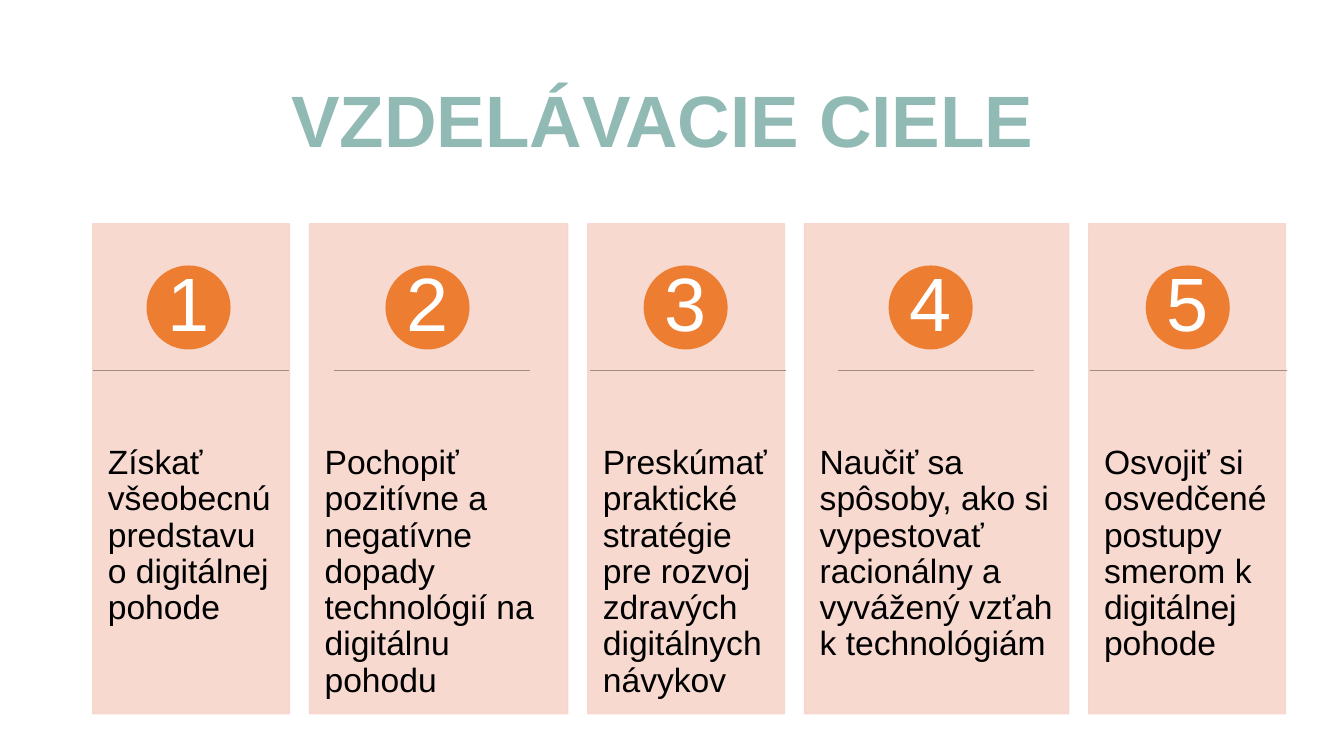
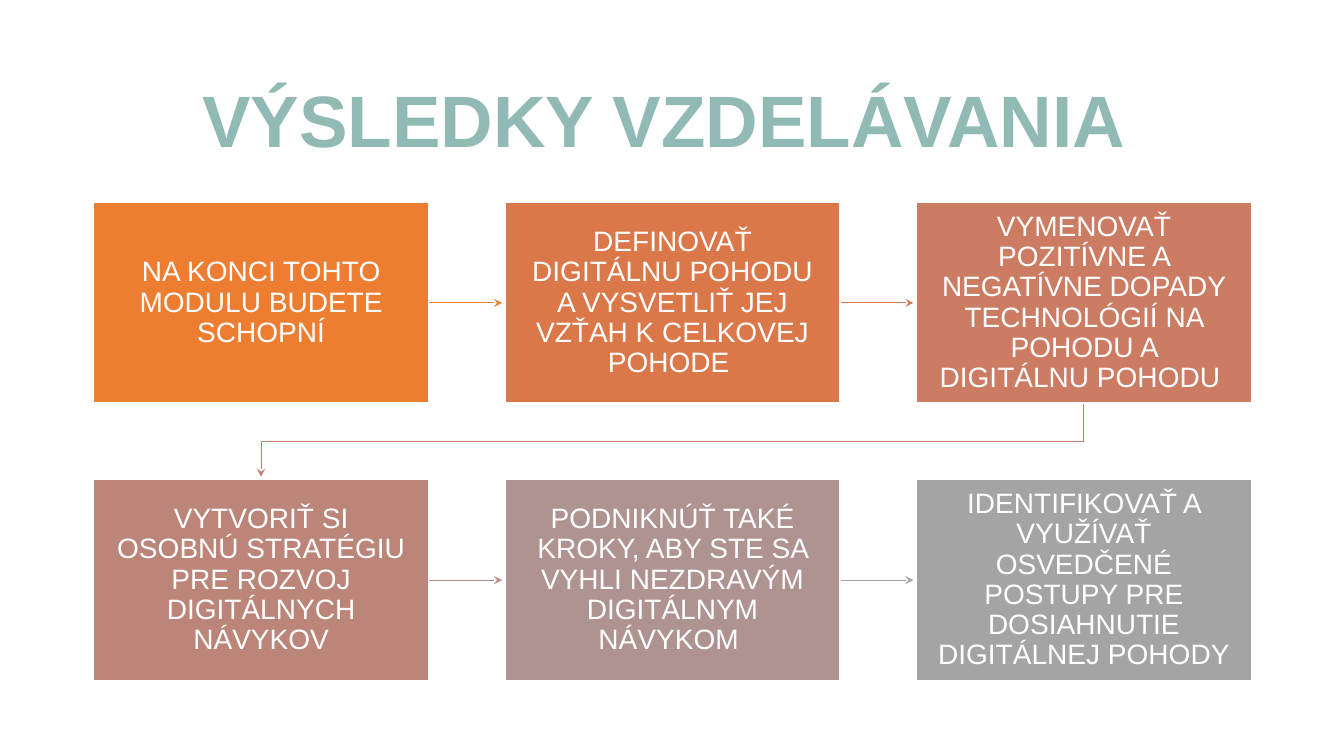
from lxml.etree import SubElement
from pptx import Presentation
from pptx.dml.color import RGBColor
from pptx.enum.shapes import MSO_CONNECTOR, MSO_SHAPE
from pptx.enum.text import MSO_ANCHOR, MSO_AUTO_SIZE, PP_ALIGN
from pptx.oxml.ns import qn
from pptx.util import Inches, Pt

FONT = "Arial"
COLORS = {
    "title": "92BAB5", "accent": "ED7D31", "card": "F7D5CB",
    "rule": "A08C84", "text": "000000", "white": "FFFFFF",
}


def write(sp, text, size, color, align=PP_ALIGN.CENTER, anchor=MSO_ANCHOR.MIDDLE,
          margins=(0.1, 0.05), bold=False):
    """Fill a shape with one paragraph; margins are (sides, top and bottom)."""
    tf = sp.text_frame
    tf.word_wrap = True
    tf.auto_size = MSO_AUTO_SIZE.NONE
    tf.vertical_anchor = anchor
    tf.margin_left = tf.margin_right = Inches(margins[0])
    tf.margin_top = tf.margin_bottom = Inches(margins[1])
    p = tf.paragraphs[0]
    p.alignment = align
    p.line_spacing = 0.9
    r = p.add_run()
    r.text = text
    r.font.name = FONT
    r.font.size = Pt(size)
    r.font.bold = bold
    r.font.color.rgb = RGBColor.from_string(color)


def paint(sp, line, width, fill=None, arrow=False):
    """Set line and fill, and take the theme shadow away."""
    sp.line.color.rgb = RGBColor.from_string(line)
    sp.line.width = Pt(width)
    if fill:
        sp.fill.solid()
        sp.fill.fore_color.rgb = RGBColor.from_string(fill)
    if arrow:
        SubElement(sp.line._get_or_add_ln(), qn("a:tailEnd"), type="stealth")
    SubElement(sp._element.spPr, qn("a:effectLst"))


prs = Presentation()
prs.slide_width = Inches(13.33)
prs.slide_height = Inches(7.5)

layout = prs.slide_layouts[5]
title = layout.placeholders[0]
title.left, title.top = Inches(0.92), Inches(0.61)
title.width, title.height = Inches(11.5), Inches(1.24)

slides = []
for heading in ("VZDELÁVACIE CIELE ", "VÝSLEDKY VZDELÁVANIA "):
    s = prs.slides.add_slide(layout)
    write(s.shapes.title, heading, 52, COLORS["title"], bold=True)
    slides.append(s)
goals, results = slides

# Goals: five numbered cards in a row
CARD_TOP, CARD_H, CARD_GAP = 2.22, 4.86, 0.2
TEXT_TOP = 2.2
CIRCLE_TOP, CIRCLE = 2.64, 0.82
RULE_Y, RULE_W = 3.67, 1.95
# card width, circle offset, rule offset, text
cards = [
    (1.95, 0.54, 0, "Získať všeobecnú predstavu o digitálnej pohode"),
    (2.56, 0.76, 0.24, "Pochopiť pozitívne a negatívne dopady technológií na digitálnu pohodu"),
    (1.95, 0.56, 0.02, "Preskúmať praktické stratégie pre rozvoj zdravých digitálnych návykov"),
    (2.62, 0.84, 0.33, "Naučiť sa spôsoby, ako si vypestovať racionálny a vyvážený vzťah k technológiám"),
    (1.95, 0.57, 0.01, "Osvojiť si osvedčené postupy smerom k digitálnej pohode"),
]
x = 0.92
for number, (width, circle_dx, rule_dx, text) in enumerate(cards, 1):
    card = goals.shapes.add_shape(MSO_SHAPE.RECTANGLE, Inches(x), Inches(CARD_TOP),
                                  Inches(width), Inches(CARD_H))
    paint(card, COLORS["card"], 1, COLORS["card"])
    for clr in card._element.spPr.iter(qn("a:srgbClr")):
        SubElement(clr, qn("a:alpha"), val="90000")
    write(card, text, 24, COLORS["text"], PP_ALIGN.LEFT, MSO_ANCHOR.TOP, (0.15, 0))
    card.text_frame.margin_top = Inches(TEXT_TOP)

    circle = goals.shapes.add_shape(MSO_SHAPE.OVAL, Inches(x + circle_dx), Inches(CIRCLE_TOP),
                                    Inches(CIRCLE), Inches(CIRCLE))
    paint(circle, COLORS["accent"], 1, COLORS["accent"])
    write(circle, str(number), 54, COLORS["white"], margins=(0.06, 0.01))

    rule_x = x + rule_dx
    rule = goals.shapes.add_connector(MSO_CONNECTOR.STRAIGHT, Inches(rule_x), Inches(RULE_Y),
                                      Inches(rule_x + RULE_W), Inches(RULE_Y))
    paint(rule, COLORS["rule"], 0.5)
    x += width + CARD_GAP

# Results: a path of boxes, three to a row
COLS = 3
LEFT, TOP = 0.93, 2.01
BOX_W, BOX_H = 3.32, 1.99
STEP_X, STEP_Y = 4.08, 2.75
ARROW_GAP = 0.03
# fill, colour of the arrow to the next box, text
boxes = [
    ("ED7D31", "ED7D31", "NA KONCI TOHTO MODULU BUDETE SCHOPNÍ"),
    ("DB784A", "D77850", "DEFINOVAŤ DIGITÁLNU POHODU A VYSVETLIŤ JEJ VZŤAH K CELKOVEJ POHODE "),
    ("CB7C63", "C47F6E", "VYMENOVAŤ POZITÍVNE A NEGATÍVNE DOPADY TECHNOLÓGIÍ NA POHODU A DIGITÁLNU POHODU "),
    ("BC857A", "B38E8A", "VYTVORIŤ SI OSOBNÚ STRATÉGIU PRE ROZVOJ DIGITÁLNYCH NÁVYKOV"),
    ("AF9390", "A4A4A4", "PODNIKNÚŤ TAKÉ KROKY, ABY STE SA VYHLI NEZDRAVÝM DIGITÁLNYM NÁVYKOM "),
    ("A4A4A4", None, "IDENTIFIKOVAŤ A VYUŽÍVAŤ OSVEDČENÉ POSTUPY PRE DOSIAHNUTIE DIGITÁLNEJ POHODY"),
]
for i, (fill, arrow_color, text) in enumerate(boxes):
    row, col = divmod(i, COLS)
    x, y = LEFT + col * STEP_X, TOP + row * STEP_Y
    right, bottom = x + BOX_W, y + BOX_H
    if arrow_color and col < COLS - 1:
        mid_y = Inches(y + BOX_H / 2)
        arrow = results.shapes.add_connector(MSO_CONNECTOR.STRAIGHT, Inches(right), mid_y,
                                             Inches(x + STEP_X - ARROW_GAP), mid_y)
        paint(arrow, arrow_color, 0.75, arrow=True)
    elif arrow_color:
        start_x, end_x = x + BOX_W / 2, LEFT + BOX_W / 2
        next_y = y + STEP_Y
        turn_y = (bottom + next_y) / 2
        fb = results.shapes.build_freeform(Inches(start_x), Inches(bottom))
        fb.add_line_segments([(Inches(start_x), Inches(turn_y)), (Inches(end_x), Inches(turn_y)),
                              (Inches(end_x), Inches(next_y - ARROW_GAP))], close=False)
        arrow = fb.convert_to_shape()
        arrow.fill.background()
        paint(arrow, arrow_color, 0.75, arrow=True)

    box = results.shapes.add_shape(MSO_SHAPE.RECTANGLE, Inches(x), Inches(y),
                                   Inches(BOX_W), Inches(BOX_H))
    paint(box, COLORS["white"], 1, fill)
    write(box, text, 20, COLORS["white"], margins=(0.16, 0.17))

prs.save("out.pptx")
